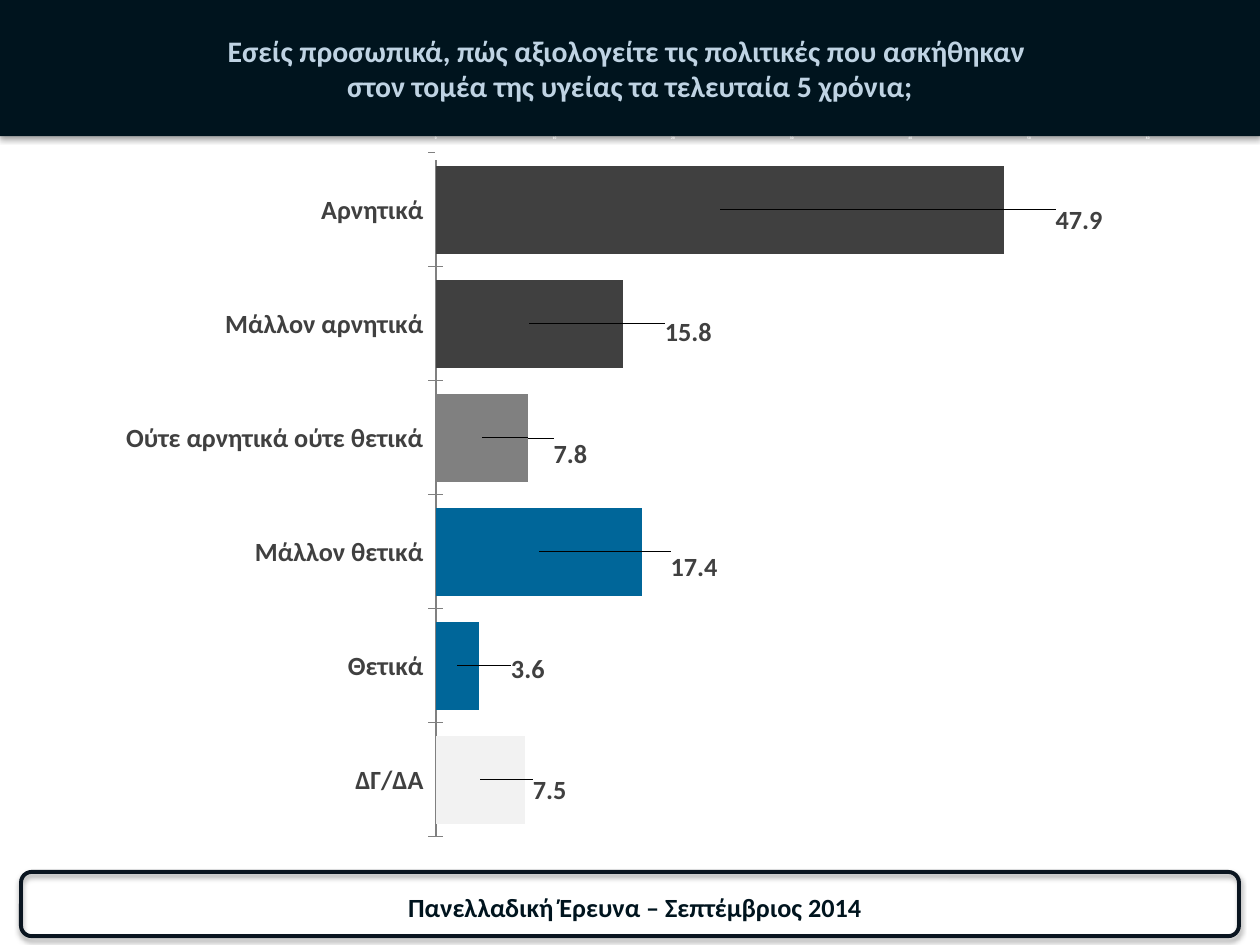
from lxml import etree
from pptx import Presentation
from pptx.chart.data import CategoryChartData
from pptx.dml.color import RGBColor
from pptx.enum.chart import XL_CHART_TYPE, XL_TICK_LABEL_POSITION, XL_TICK_MARK
from pptx.enum.shapes import MSO_SHAPE
from pptx.enum.text import MSO_ANCHOR, PP_ALIGN
from pptx.oxml import parse_xml
from pptx.oxml.ns import nsdecls, qn
from pptx.util import Pt

TITLE = [
    "Εσείς προσωπικά, πώς αξιολογείτε τις πολιτικές που ασκήθηκαν ",
    "στον τομέα της υγείας τα τελευταία 5 χρόνια;",
]
FOOTER = ["Πανελλαδική Έρευνα – Σεπτέμβριος 2014"]

# answer, percentage, bar colour, label shift from the bar centre (share of chart)
ANSWERS = [
    ("Αρνητικά", 47.9, "negative", (0.285, 0.014)),
    ("Μάλλον αρνητικά", 15.8, "negative", (0.126, 0.011)),
    ("Ούτε αρνητικά ούτε θετικά", 7.8, "neutral", (0.07, 0.021)),
    ("Μάλλον θετικά", 17.4, "positive", (0.123, 0.02)),
    ("Θετικά", 3.6, "positive", (0.056, 0.005)),
    ("ΔΓ/ΔΑ", 7.5, "no_answer", (0.055, 0.014)),
]

THEME = {
    "font": "Calibri",
    "sizes": {"title": 17, "label": 15, "value_axis": 2},
    "colors": {
        "header": "00141E", "title": "BFD3E3", "frame": "0A1520",
        "label": "404040", "axis": "808080", "white": "FFFFFF",
        "negative": "404040", "neutral": "808080",
        "positive": "006699", "no_answer": "F2F2F2",
    },
}

WIDTH, HEIGHT = 720, 540
HEADER_BOX = (0, 0, WIDTH, 77.76)
FRAME_BOX = (12, 498.24, WIDTH - 24, 36.72)
FOOTER_BOX = (144, 505.44, 437.76, 25.2)
CHART_BOX = (0, 59.76, WIDTH, 437.76)
PLOT = {"x": 0.346, "y": 0.063, "w": 0.565, "h": 0.893}


def color(name):
    return RGBColor.from_string(THEME["colors"][name])


def points(box):
    return [Pt(length) for length in box]


def style_font(font, size, color_name):
    font.name = THEME["font"]
    font.size = Pt(THEME["sizes"][size])
    font.bold = True
    font.color.rgb = color(color_name)


def add_shadow(shape, blur, distance, opacity):
    shape.shadow.inherit = False
    effects = shape._element.spPr.find(qn("a:effectLst"))
    effects.append(parse_xml(
        f'<a:outerShdw {nsdecls("a")} blurRad="{Pt(blur)}" dist="{Pt(distance)}" '
        f'dir="5400000" rotWithShape="0"><a:srgbClr val="000000">'
        f'<a:alpha val="{opacity * 1000}"/></a:srgbClr></a:outerShdw>'))


def add_centred_text(slide, box, lines, size, color_name):
    frame = slide.shapes.add_textbox(*points(box)).text_frame
    frame.word_wrap = True
    frame.vertical_anchor = MSO_ANCHOR.MIDDLE
    paragraph = frame.paragraphs[0]
    paragraph.alignment = PP_ALIGN.CENTER
    for index, line in enumerate(lines):
        if index:
            paragraph.add_line_break()
        run = paragraph.add_run()
        run.text = line
        style_font(run.font, size, color_name)


def manual_layout(values, inner=False):
    """Return a c:layout element holding shares of the chart size."""
    layout = etree.Element(qn("c:layout"))
    manual = etree.SubElement(layout, qn("c:manualLayout"))
    if inner:
        for tag, value in (("layoutTarget", "inner"), ("xMode", "edge"), ("yMode", "edge")):
            etree.SubElement(manual, qn(f"c:{tag}")).set("val", value)
    for tag, value in values.items():
        etree.SubElement(manual, qn(f"c:{tag}")).set("val", str(value))
    return layout


def style_axis(axis, size, text_color, line_color):
    axis.has_major_gridlines = False
    axis.major_tick_mark = XL_TICK_MARK.CROSS
    axis.minor_tick_mark = XL_TICK_MARK.NONE
    axis.format.line.color.rgb = color(line_color)
    axis.format.line.width = Pt(0.75)
    style_font(axis.tick_labels.font, size, text_color)


def add_answer_chart(slide):
    data = CategoryChartData(number_format="General")
    data.categories = [answer[0] for answer in ANSWERS]
    data.add_series("Series 1", [answer[1] for answer in ANSWERS])
    chart = slide.shapes.add_chart(
        XL_CHART_TYPE.BAR_STACKED, *points(CHART_BOX), data).chart
    chart.has_legend = False
    chart.has_title = False
    chart.font.name = THEME["font"]

    style_axis(chart.category_axis, "label", "label", "axis")
    chart.category_axis.reverse_order = True
    value_axis = chart.value_axis
    style_axis(value_axis, "value_axis", "white", "white")
    value_axis.tick_label_position = XL_TICK_LABEL_POSITION.LOW
    value_axis.minimum_scale = 0
    value_axis.maximum_scale = 60
    value_axis.major_unit = 10

    plot = chart.plots[0]
    plot.gap_width = 30
    plot.overlap = 100
    plot.vary_by_categories = False
    plot_area = chart._chartSpace.chart.plotArea
    for old_layout in plot_area.findall(qn("c:layout")):
        plot_area.remove(old_layout)
    plot_area.insert(0, manual_layout(PLOT, inner=True))

    series = plot.series[0]
    labels = series.data_labels
    labels.show_value = True
    labels.number_format = "#,##0.0"
    labels.number_format_is_linked = False
    style_font(labels.font, "label", "label")
    for index, (_, _, bar_color, (shift_x, shift_y)) in enumerate(ANSWERS):
        point = series.points[index]
        point.format.fill.solid()
        point.format.fill.fore_color.rgb = color(bar_color)
        style_font(point.data_label.font, "label", "label")
        label = labels._element.findall(qn("c:dLbl"))[index]
        label.insert(1, manual_layout({"x": shift_x, "y": shift_y}))


def main():
    presentation = Presentation()
    presentation.slide_width, presentation.slide_height = Pt(WIDTH), Pt(HEIGHT)
    slide = presentation.slides.add_slide(presentation.slide_layouts[6])

    header = slide.shapes.add_shape(MSO_SHAPE.RECTANGLE, *points(HEADER_BOX))
    header.fill.solid()
    header.fill.fore_color.rgb = color("header")
    header.line.fill.background()
    add_shadow(header, 3.1, 1.8, 35)

    frame = slide.shapes.add_shape(MSO_SHAPE.ROUNDED_RECTANGLE, *points(FRAME_BOX))
    frame.fill.background()
    frame.line.color.rgb = color("frame")
    frame.line.width = Pt(2.25)
    add_shadow(frame, 3.1, 1.6, 38)

    add_centred_text(slide, FOOTER_BOX, FOOTER, "label", "header")
    add_centred_text(slide, HEADER_BOX, TITLE, "title", "title")
    add_answer_chart(slide)
    presentation.save("out.pptx")


if __name__ == "__main__":
    main()
